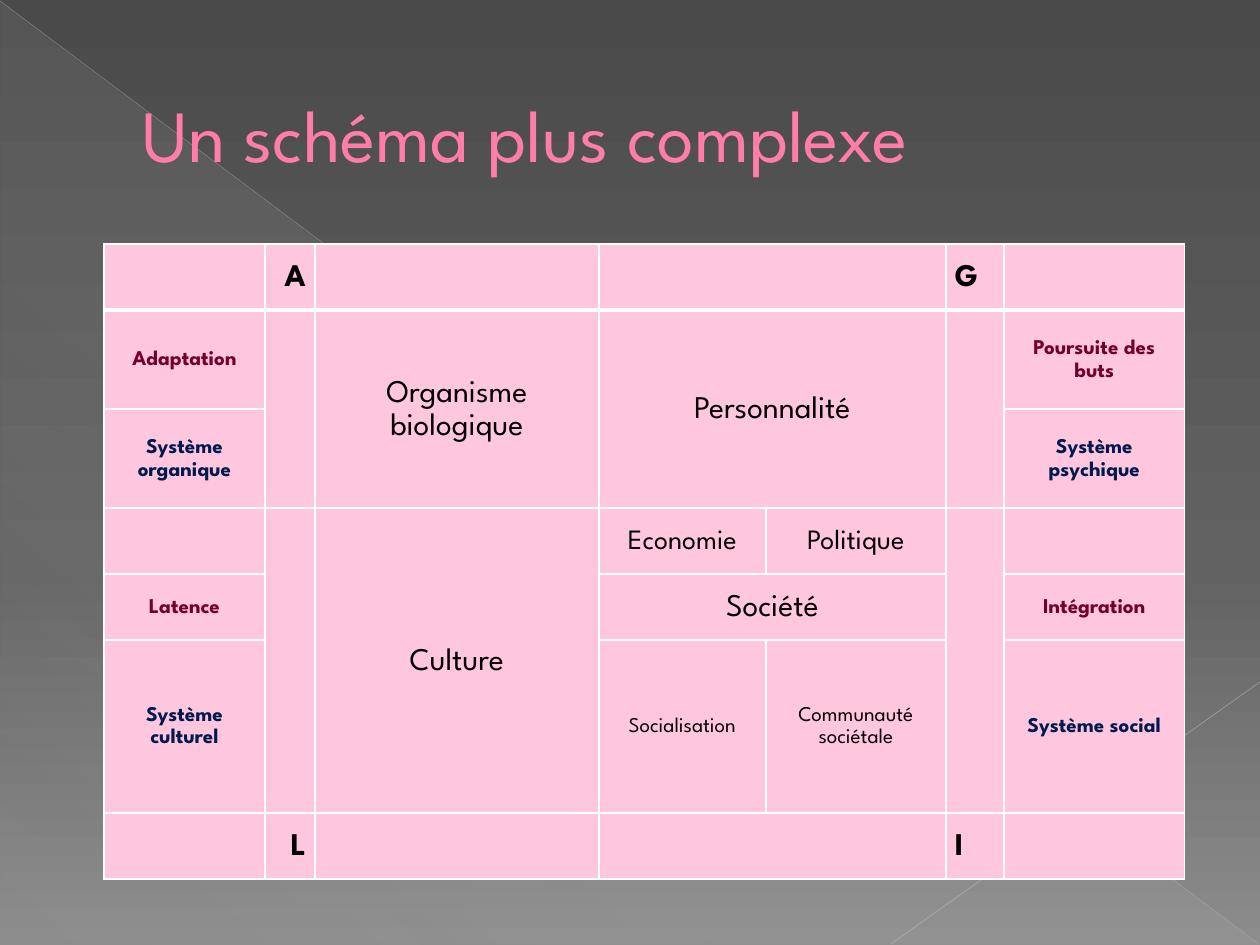
from lxml.etree import SubElement
from pptx import Presentation
from pptx.dml.color import RGBColor
from pptx.enum.shapes import MSO_CONNECTOR, MSO_SHAPE
from pptx.enum.text import MSO_ANCHOR, PP_ALIGN
from pptx.oxml.ns import qn
from pptx.util import Pt

PX = 914400 // 126
FONT = "League Spartan"
PINK = RGBColor(0xFF, 0x7D, 0xA7)
PALE_PINK = RGBColor(0xFF, 0xC7, 0xDD)
WHITE = RGBColor(0xFF, 0xFF, 0xFF)
BLACK = RGBColor(0, 0, 0)
WINE = RGBColor(0x72, 0x00, 0x2C)
NAVY = RGBColor(0x00, 0x1A, 0x4F)
SILVER = RGBColor(0xD2, 0xD2, 0xD2)
GREY = RGBColor(0xC2, 0xC2, 0xC2)

# Gradient stops: position %, colour, opacity %
BACKDROP = [(0, RGBColor(0x4A, 0x4A, 0x4A), 100), (60, RGBColor(0x62, 0x62, 0x62), 100),
            (100, RGBColor(0x8C, 0x8C, 0x8C), 100)]
SHEEN = [(0, SILVER, 10), (70, SILVER, 8), (100, SILVER, 1)]
# Start x, y, end x, y, width in points, opacity %
RAYS = [(0, 1, 1259, 944, 0.39, 35), (1260, 682, 891, 944, 0.47, 45)]

TITLE = "Un schéma plus complexe"
COLUMNS = [161, 50, 284, 167, 180, 58, 181]
ROWS = [66, 99, 99, 66, 66, 173, 66]
# Row, column, rows spanned, columns spanned
MERGES = [(0, 3, 1, 2), (1, 1, 2, 1), (1, 2, 2, 1), (1, 3, 2, 2), (1, 5, 2, 1),
          (3, 1, 3, 1), (3, 2, 3, 1), (3, 5, 3, 1), (4, 3, 1, 2), (6, 3, 1, 2)]

FUNCTION = {"size": Pt(12), "bold": True, "color": WINE}
SYSTEM = {**FUNCTION, "color": NAVY}
FIELD = {"size": Pt(18), "bold": False, "color": BLACK}
MEDIUM = {**FIELD, "size": Pt(16)}
SMALL = {**FIELD, "size": Pt(12)}
LETTER = {**FIELD, "bold": True}
CENTER, LEFT, RIGHT = PP_ALIGN.CENTER, PP_ALIGN.LEFT, PP_ALIGN.RIGHT

LABELS = [
    (0, 1, "A", LETTER, RIGHT), (0, 5, "G", LETTER, LEFT),
    (6, 1, "L", LETTER, RIGHT), (6, 5, "I", LETTER, LEFT),
    (1, 0, "Adaptation", FUNCTION, CENTER), (1, 6, "Poursuite des buts", FUNCTION, CENTER),
    (2, 0, "Système organique", SYSTEM, CENTER), (2, 6, "Système psychique", SYSTEM, CENTER),
    (4, 0, "Latence", FUNCTION, CENTER), (4, 6, "Intégration", FUNCTION, CENTER),
    (5, 0, "Système culturel", SYSTEM, CENTER), (5, 6, "Système social", SYSTEM, CENTER),
    (1, 2, "Organisme biologique", FIELD, CENTER), (1, 3, "Personnalité", FIELD, CENTER),
    (3, 2, "Culture", FIELD, CENTER), (4, 3, "Société", FIELD, CENTER),
    (3, 3, "Economie", MEDIUM, CENTER), (3, 4, "Politique", MEDIUM, CENTER),
    (5, 3, "Socialisation", SMALL, CENTER), (5, 4, "Communauté sociétale", SMALL, CENTER),
]


def px(*lengths):
    return [length * PX for length in lengths]


def add_color(parent, color, opacity=100):
    node = SubElement(parent, qn("a:srgbClr"), val=str(color))
    if opacity < 100:
        SubElement(node, qn("a:alpha"), val=str(opacity * 1000))


def set_gradient(fill, owner, stops, angle):
    """Swap the solid fill of the owner element for a gradient with opacity."""
    fill.solid()
    solid = owner.find(".//" + qn("a:solidFill"))
    gradient = solid.makeelement(qn("a:gradFill"), {"rotWithShape": "1"})
    stop_list = SubElement(gradient, qn("a:gsLst"))
    for position, color, opacity in stops:
        stop = SubElement(stop_list, qn("a:gs"), pos=str(position * 1000))
        add_color(stop, color, opacity)
    SubElement(gradient, qn("a:lin"), ang=str(angle * 60000), scaled="0")
    solid.getparent().replace(solid, gradient)


def format_text(para, text, style):
    span = para.add_run()
    span.text = text
    span.font.name = FONT
    for name, value in style.items():
        if name == "color":
            span.font.color.rgb = value
        else:
            setattr(span.font, name, value)


def set_borders(cell, widths):
    properties = cell._tc.get_or_add_tcPr()
    for index, (side, width) in enumerate(widths.items()):
        line = properties.makeelement(qn("a:ln" + side), {"w": str(Pt(width))})
        add_color(SubElement(line, qn("a:solidFill")), WHITE)
        properties.insert(index, line)


def add_backdrop(page):
    set_gradient(page.background.fill, page.element, BACKDROP, 90)
    triangle = page.shapes.add_shape(MSO_SHAPE.RIGHT_TRIANGLE, *px(1, 2, 1258, 942))
    triangle.shadow.inherit = False
    triangle.line.fill.background()
    set_gradient(triangle.fill, triangle.element, SHEEN, 133)
    for x1, y1, x2, y2, width, opacity in RAYS:
        ray = page.shapes.add_connector(MSO_CONNECTOR.STRAIGHT, *px(x1, y1, x2, y2))
        ray.line.width = Pt(width)
        ray.line.color.rgb = GREY
        color = ray.element.spPr.find(".//" + qn("a:srgbClr"))
        SubElement(color, qn("a:alpha"), val=str(opacity * 1000))
        SubElement(ray.element.spPr, qn("a:effectLst"))


def add_title(page):
    title = page.shapes.title
    title.left, title.top, title.width, title.height = px(63, 37, 1134, 193)
    title.text_frame.vertical_anchor = MSO_ANCHOR.MIDDLE
    para = title.text_frame.paragraphs[0]
    para.alignment = LEFT
    para._p.get_or_add_pPr().set("marL", str(67 * PX))
    format_text(para, TITLE, {"size": Pt(42), "bold": False, "color": PINK})
    page.shapes._spTree.append(title.element)  # in front of the backdrop


def add_scheme(page):
    area = px(104, 244, sum(COLUMNS), sum(ROWS))
    table = page.shapes.add_table(len(ROWS), len(COLUMNS), *area).table
    for column, width in zip(table.columns, COLUMNS):
        column.width = width * PX
    for row, height in zip(table.rows, ROWS):
        row.height = height * PX
    for row in range(len(ROWS)):
        for column in range(len(COLUMNS)):
            cell = table.cell(row, column)
            cell.fill.solid()
            cell.fill.fore_color.rgb = PALE_PINK
            set_borders(cell, {"L": 1, "R": 1, "T": 3 if row == 1 else 1,
                               "B": 3 if row == 0 else 1})
    for row, column, height, width in MERGES:
        table.cell(row, column).merge(table.cell(row + height - 1, column + width - 1))
    for row, column, text, style, alignment in LABELS:
        cell = table.cell(row, column)
        cell.vertical_anchor = MSO_ANCHOR.MIDDLE
        cell.margin_left = cell.margin_right = 9 * PX
        cell.margin_top = cell.margin_bottom = 0
        para = cell.text_frame.paragraphs[0]
        para.alignment = alignment
        para.line_spacing = 1.15
        format_text(para, text, style)


def main():
    deck = Presentation()
    deck.slide_width, deck.slide_height = px(1260, 945)
    page = deck.slides.add_slide(deck.slide_layouts[5])
    add_backdrop(page)
    add_title(page)
    add_scheme(page)
    deck.save("out.pptx")


if __name__ == "__main__":
    main()
